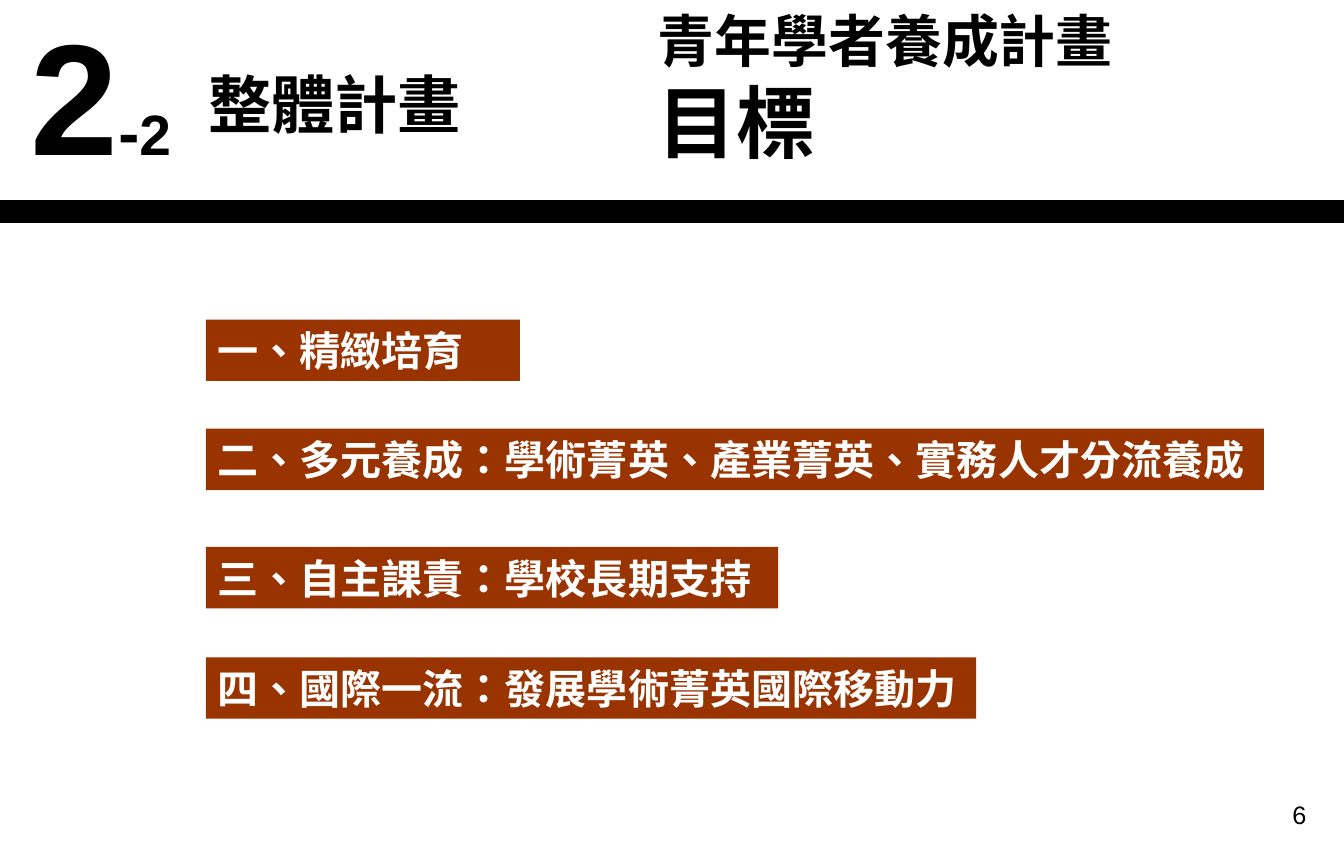
from dataclasses import dataclass
from lxml import etree
from pptx import Presentation
from pptx import util as u
from pptx.dml.color import RGBColor
from pptx.enum import shapes, text
from pptx.oxml.ns import qn

CELL = u.Inches(0.1)  # one column or row of the slide grid
COLS = 118.1
PLAIN = "{2D5ABB26-0587-4C30-8999-92F81FD0307C}"  # table style without grid


@dataclass(frozen=True)
class Theme:
    ink: str = "000000"
    bar: str = "993300"
    pale: str = "FFFFFF"
    latin: str = "Arial"
    han: str = "Noto Sans CJK SC"
    huge: int = 100
    goal: int = 50
    head: int = 40
    plan: int = 36
    item: int = 26
    page: int = 16


T = Theme()

GOALS = [  # row, width in columns, wording
    (28.1, 27.6, "一、精緻培育"),
    (37.7, 93, "二、多元養成：學術菁英、產業菁英、實務人才分流養成"),
    (48.1, 50.3, "三、自主課責：學校長期支持"),
    (57.8, 67.7, "四、國際一流：發展學術菁英國際移動力"),
]


def grid(*cells):
    return [u.Emu(round(c * CELL)) for c in cells]


def style(run, size, color=T.ink, face=T.han, bold=True):
    font = run.font
    font.size, font.bold, font.name = u.Pt(size), bold, face
    font.color.rgb = RGBColor.from_string(color)
    if face == T.han:
        props = run._r.get_or_add_rPr()
        props.set("lang", "zh-TW")
        etree.SubElement(props, qn("a:ea")).set("typeface", face)


def rule(slide, row):
    x, y, end = grid(0, row, COLS)
    line = slide.shapes.add_connector(shapes.MSO_CONNECTOR.STRAIGHT, x, y, end, y)
    line.line.color.rgb = RGBColor.from_string(T.ink)
    line.line.width = u.Pt(15)
    etree.SubElement(line._element.spPr, qn("a:effectLst"))


def bar(slide, row, width, words):
    kind = shapes.MSO_SHAPE.RECTANGLE
    box = slide.shapes.add_shape(kind, *grid(18.1, row, width, 5.4))
    box.shadow.inherit = False
    box.fill.solid()
    box.fill.fore_color.rgb = RGBColor.from_string(T.bar)
    box.line.fill.background()
    frame = box.text_frame
    frame.word_wrap = False
    frame.vertical_anchor = text.MSO_ANCHOR.MIDDLE
    frame.text = words
    frame.paragraphs[0].alignment = text.PP_ALIGN.LEFT
    style(frame.paragraphs[0].runs[0], T.item, T.pale)


def title(slide):
    box = slide.shapes.title
    box.left, box.top, box.width, box.height = grid(56.8, 0, 58, 15.5)
    frame = box.text_frame
    frame.text = "青年學者養成計畫\n目標"
    frame.auto_size = text.MSO_AUTO_SIZE.NONE
    frame.vertical_anchor = text.MSO_ANCHOR.TOP
    for para, size in zip(frame.paragraphs, (T.plan, T.goal)):
        para.alignment = text.PP_ALIGN.JUSTIFY
        style(para.runs[0], size)


def section(slide):
    """Table with the section number and its name."""
    table = slide.shapes.add_table(1, 2, *grid(0.4, 0, 42.1, 17.7)).table
    table.first_row = table.horz_banding = False
    table._tbl.tblPr.find(qn("a:tableStyleId")).text = PLAIN
    for col, width in zip(table.columns, grid(16.9, 25.2)):
        col.width = width
    for cell in table.iter_cells():
        cell.fill.background()
        cell.vertical_anchor = text.MSO_ANCHOR.MIDDLE
    mark, name = (cell.text_frame.paragraphs[0] for cell in table.iter_cells())
    mark.alignment = text.PP_ALIGN.CENTER
    for words, size in (("2", T.huge), ("-", T.head), ("2", T.plan)):
        run = mark.add_run()
        run.text = words
        style(run, size, face=T.latin)
    name.text = "整體計畫"
    style(name.runs[0], T.head)


def page(slide, number):
    frame = slide.shapes.add_textbox(*grid(88.2, 69.8, 27.6, 5.2)).text_frame
    frame.word_wrap = True
    frame.text = number
    para = frame.paragraphs[0]
    para.alignment = text.PP_ALIGN.RIGHT
    style(para.runs[0], T.page, face=T.latin, bold=False)


def main():
    deck = Presentation()
    deck.slide_width = u.Pt(850.5)
    deck.slide_height = u.Pt(540)
    slide = deck.slides.add_slide(deck.slide_layouts.get_by_name("Title Only"))
    rule(slide, 18.6)
    page(slide, "6")
    for goal in GOALS:
        bar(slide, *goal)
    title(slide)
    section(slide)
    deck.save("out.pptx")


if __name__ == "__main__":
    main()
